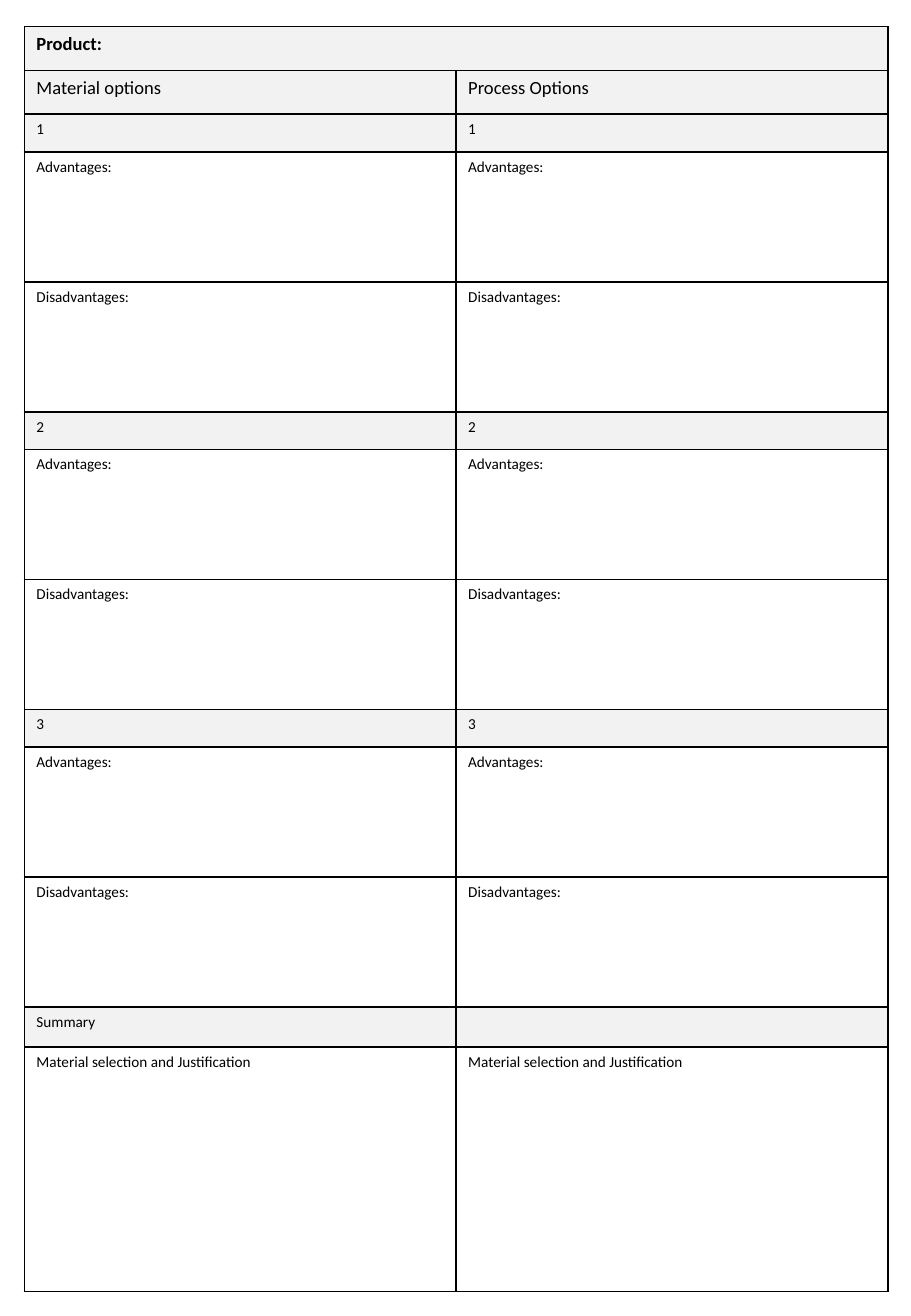
from dataclasses import dataclass

from lxml import etree
from pptx import Presentation
from pptx.dml.color import RGBColor
from pptx.oxml import ns
from pptx.util import Inches, Pt


@dataclass(frozen=True)
class Theme:
    font: str = "Calibri"
    ink: str = "000000"
    shade: str = "F2F2F2"
    head: int = 11
    body: int = 9
    line: float = 1


@dataclass(frozen=True)
class Row:
    high: float
    texts: tuple
    size: int
    shaded: bool = False
    bold: bool = False


class Sheet:
    def __init__(self, deck, theme):
        self.theme = theme
        self.slide = deck.slides.add_slide(deck.slide_layouts[6])

    def table(self, left, top, wide, rows):
        high = sum(row.high for row in rows)
        cols = max(len(row.texts) for row in rows)
        frame = self.slide.shapes.add_table(
            len(rows), cols, Inches(left), Inches(top), Inches(wide), Inches(high))
        grid = frame.table
        grid.first_row = grid.horz_banding = False
        for col in grid.columns:
            col.width = Inches(wide / cols)
        for y, row in enumerate(rows):
            grid.rows[y].height = Inches(row.high)
            for x in range(cols):
                self.cell(grid.cell(y, x), row, row.texts[x] if x < len(row.texts) else "")
            if len(row.texts) < cols:
                grid.cell(y, len(row.texts) - 1).merge(grid.cell(y, cols - 1))

    def cell(self, cell, row, label):
        self.border(cell)
        if row.shaded:
            cell.fill.solid()
            cell.fill.fore_color.rgb = RGBColor.from_string(self.theme.shade)
        else:
            cell.fill.background()
        para = cell.text_frame.paragraphs[0]
        para.text = label
        for run in para.runs:
            run.font.name = self.theme.font
            run.font.size = Pt(row.size)
            run.font.bold = row.bold
            run.font.color.rgb = RGBColor.from_string(self.theme.ink)
        if not label:
            # Keeps an empty cell from growing to the default type size
            etree.SubElement(para._p, ns.qn("a:endParaRPr"), sz=str(row.size * 100))

    def border(self, cell):
        props = cell._tc.get_or_add_tcPr()
        for side in ("lnL", "lnR", "lnT", "lnB"):
            line = etree.SubElement(
                props, ns.qn("a:" + side), w=str(Pt(self.theme.line)))
            fill = etree.SubElement(line, ns.qn("a:solidFill"))
            etree.SubElement(fill, ns.qn("a:srgbClr"), val=self.theme.ink)


def main():
    deck = Presentation()
    deck.slide_width, deck.slide_height = Inches(7.5), Inches(10.83)
    theme = Theme()
    rows = [
        Row(0.36, ("Product:",), theme.head, shaded=True, bold=True),
        Row(0.36, ("Material options", "Process Options"), theme.head, shaded=True),
    ]
    for option in range(1, 4):
        rows.append(Row(0.31, (str(option),) * 2, theme.body, shaded=True))
        for label in ("Advantages:", "Disadvantages:"):
            rows.append(Row(1.07, (label,) * 2, theme.body))
    rows += [
        Row(0.33, ("Summary", ""), theme.body, shaded=True),
        Row(2.01, ("Material selection and Justification",) * 2, theme.body),
    ]
    Sheet(deck, theme).table(0.2, 0.22, 7.11, rows)
    deck.save("out.pptx")


if __name__ == "__main__":
    main()
